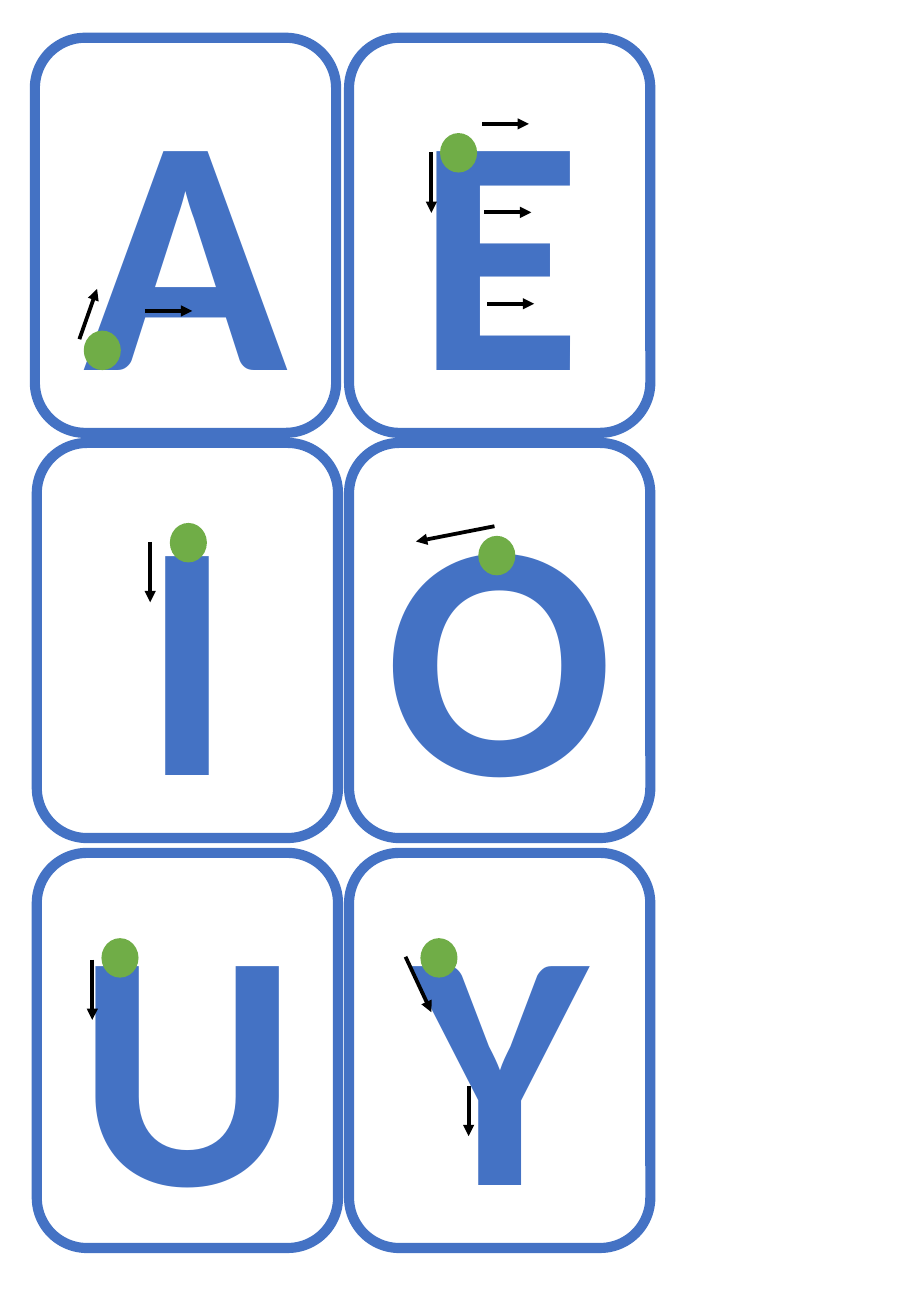
import dataclasses

import pptx
import pptx.dml.color
import pptx.enum.shapes
import pptx.enum.text
import pptx.oxml
import pptx.oxml.ns
import pptx.util

Cm = pptx.util.Cm
Pt = pptx.util.Pt
Rgb = pptx.dml.color.RGBColor
Preset = pptx.enum.shapes.MSO_SHAPE


@dataclasses.dataclass(frozen=True)
class Theme:
    """Colours, font and sizes of the vowel cards."""
    letter: Rgb = Rgb(0x44, 0x72, 0xC4)
    start_dot: Rgb = Rgb(0x70, 0xAD, 0x47)
    stroke: Rgb = Rgb(0, 0, 0)
    font: str = "Calibri"
    letter_size: float = 200
    border_width: float = 6
    dot_border_width: float = 1
    stroke_width: float = 2.25


THEME = Theme()
CARD_WIDTH, CARD_HEIGHT = 6.3, 8.26
DOT_WIDTH, DOT_HEIGHT = 0.74, 0.79
LEFT_COLUMN, RIGHT_COLUMN = 0.77, 7.3
TOP_ROW, MIDDLE_ROW, BOTTOM_ROW = 0.79, 9.26, 17.83


@dataclasses.dataclass(frozen=True)
class Card:
    """A letter, its place, and its start dot and strokes in cm from the card corner."""
    letter: str
    left: float
    top: float
    dot_corner: tuple
    strokes: tuple


CARDS = (
    Card("A", 0.73, TOP_ROW, (1.04, 6.14),
         ((0.93, 6.3, 1.3, 5.25), (2.3, 5.71, 3.29, 5.71))),
    Card("I", LEFT_COLUMN, MIDDLE_ROW, (2.8, 1.69), ((2.37, 2.07, 2.37, 3.33),)),
    Card("E", RIGHT_COLUMN, TOP_ROW, (1.92, 2.01),
         ((1.72, 2.39, 1.72, 3.66), (2.78, 1.8, 3.76, 1.8),
          (2.83, 3.65, 3.81, 3.65), (2.89, 5.56, 3.87, 5.56))),
    Card("O", RIGHT_COLUMN, MIDDLE_ROW, (2.72, 1.96), ((3.04, 1.74, 1.4, 2.06),)),
    Card("U", LEFT_COLUMN, BOTTOM_ROW, (1.37, 1.8), ((1.16, 2.23, 1.16, 3.49),)),
    Card("Y", RIGHT_COLUMN, BOTTOM_ROW, (1.51, 1.8),
         ((1.18, 2.17, 1.72, 3.33), (2.5, 4.88, 2.5, 5.92))),
)


def write_text(frame, text, *, size, color, bold=False):
    """Write one centred paragraph in the given format."""
    frame.word_wrap = True
    frame.vertical_anchor = pptx.enum.text.MSO_ANCHOR.MIDDLE
    paragraph = frame.paragraphs[0]
    paragraph.alignment = pptx.enum.text.PP_ALIGN.CENTER
    run = paragraph.add_run()
    run.text = text
    run.font.name = THEME.font
    run.font.size = Pt(size)
    run.font.bold = bold
    run.font.color.rgb = color


def add_outlined(slide, preset, left, top, width, height, color, border_width):
    """Add an unfilled preset shape with a coloured border."""
    outlined = slide.shapes.add_shape(preset, Cm(left), Cm(top), Cm(width), Cm(height))
    outlined.shadow.inherit = False
    outlined.fill.background()
    outlined.line.color.rgb = color
    outlined.line.width = Pt(border_width)
    return outlined


def add_stroke_arrow(slide, x1, y1, x2, y2):
    """Add an arrow showing the direction of a pen stroke."""
    arrow = slide.shapes.add_connector(
        pptx.enum.shapes.MSO_CONNECTOR.STRAIGHT, Cm(x1), Cm(y1), Cm(x2), Cm(y2))
    arrow.line.color.rgb = THEME.stroke
    arrow.line.width = Pt(THEME.stroke_width)
    qn = pptx.oxml.ns.qn
    outline = arrow.line._get_or_add_ln()
    outline.append(outline.makeelement(qn("a:tailEnd"), {"type": "triangle"}))
    properties = arrow._element.spPr
    properties.append(properties.makeelement(qn("a:effectLst"), {}))


def add_letter(slide, card):
    """Place the bordered letter of a card."""
    border = add_outlined(slide, Preset.ROUNDED_RECTANGLE, card.left, card.top,
                          CARD_WIDTH, CARD_HEIGHT, THEME.letter, THEME.border_width)
    write_text(border.text_frame, card.letter,
               size=THEME.letter_size, color=THEME.letter, bold=True)


def add_writing_guide(slide, card):
    """Place the start dot and stroke arrows relative to a card's corner."""
    dot_x, dot_y = card.dot_corner
    start_dot = add_outlined(slide, Preset.OVAL, card.left + dot_x, card.top + dot_y,
                             DOT_WIDTH, DOT_HEIGHT, THEME.start_dot, THEME.dot_border_width)
    start_dot.fill.solid()
    start_dot.fill.fore_color.rgb = THEME.start_dot
    for x1, y1, x2, y2 in card.strokes:
        add_stroke_arrow(slide, card.left + x1, card.top + y1, card.left + x2, card.top + y2)


def main():
    """Build the sheet of vowel cards."""
    deck = pptx.Presentation()
    deck.slide_width, deck.slide_height = Cm(19.05), Cm(27.51)
    sheet = deck.slides.add_slide(deck.slide_layouts[6])
    for add_part in (add_letter, add_writing_guide):
        for card in CARDS:
            add_part(sheet, card)
    deck.save("out.pptx")


if __name__ == "__main__":
    main()
